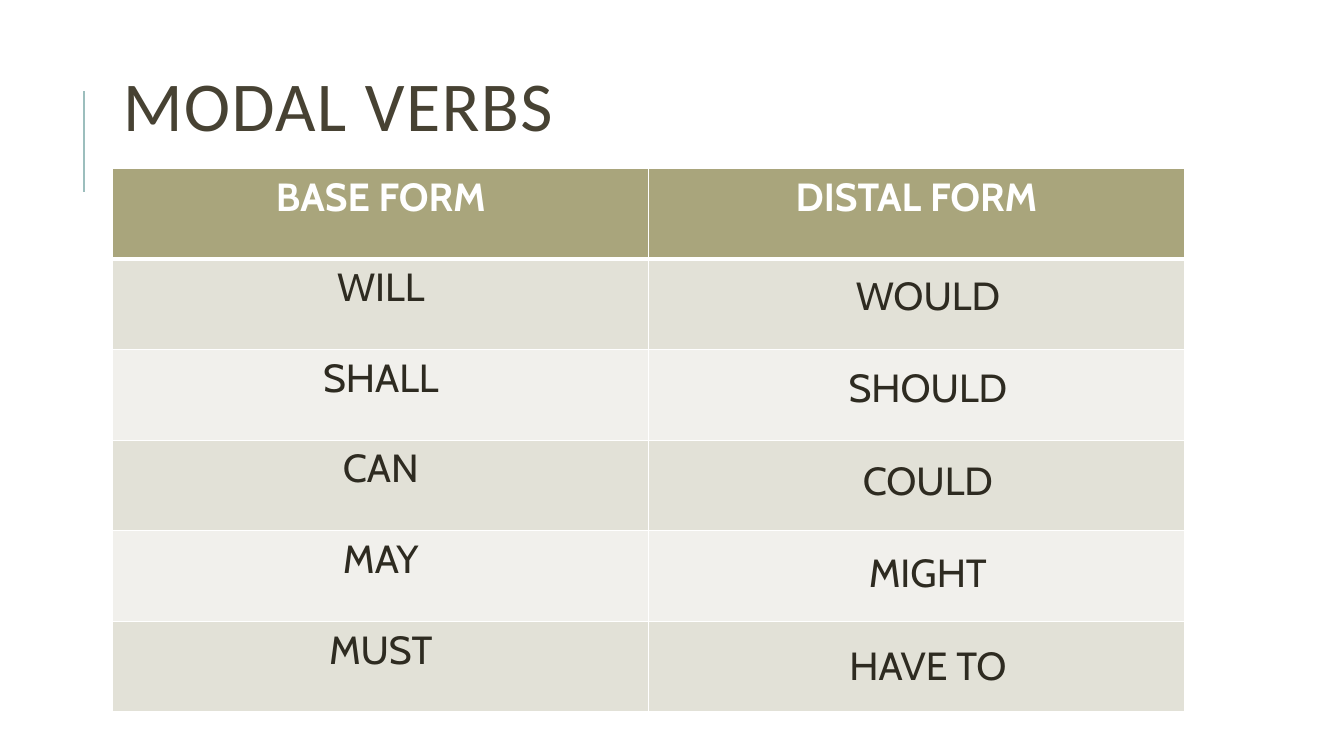
from dataclasses import dataclass

from lxml.etree import SubElement
from pptx import Presentation
from pptx.dml.color import RGBColor
from pptx.enum.shapes import MSO_CONNECTOR
from pptx.enum.text import MSO_ANCHOR, MSO_AUTO_SIZE, PP_ALIGN
from pptx.oxml import parse_xml
from pptx.oxml.ns import nsdecls, qn
from pptx.util import Pt


@dataclass(frozen=True)
class Theme:
    title_font: str = "Calibri"
    body_font: str = "Cabin"
    title_size: float = 50
    body_size: float = 28
    title_color: str = "474233"
    ink: str = "2E2B21"
    white: str = "FFFFFF"
    accent: str = "9CBEBD"
    header: str = "A9A57C"
    bands: tuple = ("E2E1D7", "F1F0EC")


class SlideBuilder:
    def __init__(self, slide, theme):
        self.slide = slide
        self.theme = theme

    def add_text(self, frame, text, color, bold=False, align=PP_ALIGN.CENTER,
                 font=None, size=None):
        paragraph = frame.paragraphs[0]
        paragraph.alignment = align
        run = paragraph.add_run()
        run.text = text
        formats = {"name": font or self.theme.body_font,
                   "size": Pt(size or self.theme.body_size), "bold": bold}
        for name, value in formats.items():
            setattr(run.font, name, value)
        run.font.color.rgb = RGBColor.from_string(color)
        return paragraph, run

    def frame(self, box, **formats):
        text_frame = self.slide.shapes.add_textbox(*map(Pt, box)).text_frame
        for name, value in {"word_wrap": True, **formats}.items():
            setattr(text_frame, name, value)
        return text_frame

    def title(self, text, box):
        text_frame = self.frame(box, vertical_anchor=MSO_ANCHOR.MIDDLE)
        paragraph, run = self.add_text(
            text_frame, text, self.theme.title_color, align=PP_ALIGN.LEFT,
            font=self.theme.title_font, size=self.theme.title_size)
        paragraph.line_spacing = 0.8
        run.font._element.set("spc", "100")

    def label(self, text, box):
        text_frame = self.frame(box, auto_size=MSO_AUTO_SIZE.SHAPE_TO_FIT_TEXT)
        self.add_text(text_frame, text, self.theme.ink)

    def rule(self, x, start, end):
        line = self.slide.shapes.add_connector(
            MSO_CONNECTOR.STRAIGHT, Pt(x), Pt(start), Pt(x), Pt(end))
        line.line.color.rgb = RGBColor.from_string(self.theme.accent)
        line.line.width = Pt(1.5)
        SubElement(line._element.spPr, qn("a:effectLst"))

    def borders(self, cell, top, bottom):
        properties = cell._tc.get_or_add_tcPr()
        widths = {"lnL": 1, "lnR": 1, "lnT": top, "lnB": bottom}
        for index, (side, width) in enumerate(widths.items()):
            properties.insert(index, parse_xml(
                f'<a:{side} {nsdecls("a")} w="{Pt(width)}"><a:solidFill>'
                f'<a:srgbClr val="{self.theme.white}"/>'
                f'</a:solidFill></a:{side}>'))

    def table(self, rows, box):
        grid = self.slide.shapes.add_table(
            len(rows), len(rows[0]), *map(Pt, box)).table
        for r, texts in enumerate(rows):
            is_header = r == 0
            fill = self.theme.header if is_header else self.theme.bands[(r - 1) % 2]
            for c, text in enumerate(texts):
                cell = grid.cell(r, c)
                cell.fill.solid()
                cell.fill.fore_color.rgb = RGBColor.from_string(fill)
                self.borders(cell, 3 if r == 1 else 1, 3 if is_header else 1)
                if text:
                    color = self.theme.white if is_header else self.theme.ink
                    self.add_text(cell.text_frame, text, color, is_header)


def main():
    presentation = Presentation()
    presentation.slide_width, presentation.slide_height = Pt(960), Pt(540)
    slide = presentation.slides.add_slide(presentation.slide_layouts[6])
    builder = SlideBuilder(slide, Theme())

    # Title and its accent rule
    builder.rule(60, 136.8, 64.8)
    builder.title("MODAL VERBS", (80.64, 20.16, 765.36, 118.08))

    # Table of base forms
    modals = {"WILL": "WOULD", "SHALL": "SHOULD", "CAN": "COULD",
              "MAY": "MIGHT", "MUST": "HAVE TO"}
    base_rows = [(base, "") for base in modals]
    builder.table([("BASE FORM", "DISTAL FORM"), *base_rows],
                  (80.64, 120.4, 765.36, 388.08))

    # Distal forms laid over the second column
    for index, distal in enumerate(modals.values()):
        builder.label(distal, (531.36, 190.08 + index * 66.06, 262.8, 41.04))

    presentation.save("out.pptx")


if __name__ == "__main__":
    main()
